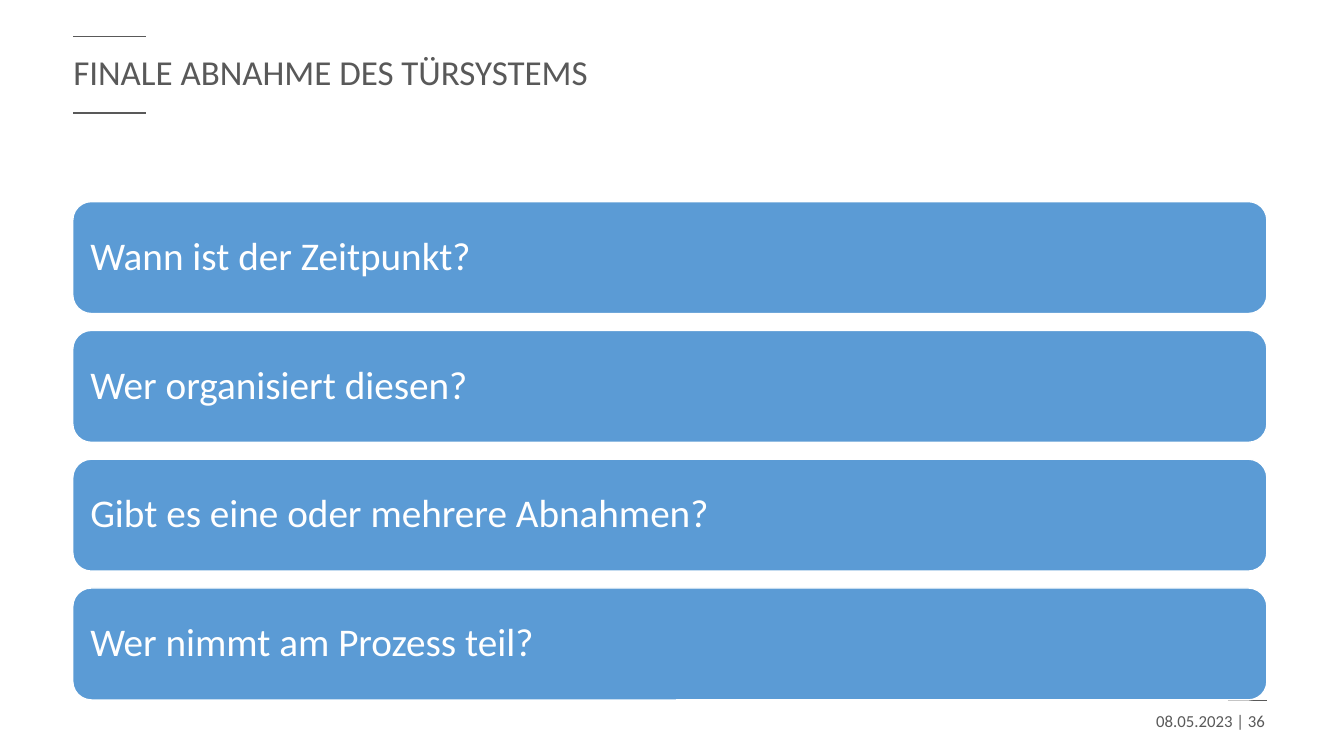
"""Build the slide on the final acceptance of the door system."""
from dataclasses import dataclass

from lxml.etree import SubElement
from pptx import Presentation
from pptx.dml.color import RGBColor
from pptx.enum.shapes import MSO_CONNECTOR as Connector, MSO_SHAPE as Shape
from pptx.enum.text import MSO_ANCHOR as Anchor, MSO_AUTO_SIZE as AutoSize, PP_ALIGN as Align
from pptx.oxml.ns import qn
from pptx.slide import Slide
from pptx.text.text import TextFrame
from pptx.util import Pt

GREY = RGBColor(0x59, 0x59, 0x59)
BLUE = RGBColor(0x5B, 0x9B, 0xD5)
WHITE = RGBColor(0xFF, 0xFF, 0xFF)
FONT = "Calibri"

CARD_LEFT, CARD_TOP = 52, 144
CARD_WIDTH, CARD_HEIGHT = 853, 80
CARD_PITCH = 92
CARD_INSET = 8.64


@dataclass(frozen=True)
class Rule:
    left: float
    right: float
    y: float


@dataclass(frozen=True)
class TextStyle:
    size: float
    color: RGBColor
    align: Align = Align.LEFT
    line_spacing: float = 0.9


TITLE_STYLE = TextStyle(25, GREY)
CARD_STYLE = TextStyle(28, WHITE)
FOOTER_STYLE = TextStyle(12, GREY, Align.RIGHT, 1.0)

RULES = (
    Rule(52.4, 104, 26),
    Rule(52.4, 104, 80.6),
    Rule(877, 905, 500.4),
)
QUESTIONS = (
    "Wann ist der Zeitpunkt?",
    "Wer organisiert diesen?",
    "Gibt es eine oder mehrere Abnahmen?",
    "Wer nimmt am Prozess teil?",
)


def write(frame: TextFrame, text: str, style: TextStyle) -> None:
    frame.word_wrap = True
    frame.auto_size = AutoSize.NONE
    frame.vertical_anchor = Anchor.MIDDLE
    paragraph = frame.paragraphs[0]
    paragraph.alignment = style.align
    paragraph.line_spacing = style.line_spacing
    run = paragraph.add_run()
    run.text = text
    run.font.name = FONT
    run.font.size = Pt(style.size)
    run.font.color.rgb = style.color


def draw_rule(slide: Slide, rule: Rule) -> None:
    line = slide.shapes.add_connector(
        Connector.STRAIGHT, Pt(rule.left), Pt(rule.y), Pt(rule.right), Pt(rule.y)
    )
    line.line.color.rgb = GREY
    line.line.width = Pt(1)
    SubElement(line._element.spPr, qn("a:effectLst"))


def draw_card(slide: Slide, index: int, question: str) -> None:
    card = slide.shapes.add_shape(
        Shape.ROUNDED_RECTANGLE,
        Pt(CARD_LEFT), Pt(CARD_TOP + index * CARD_PITCH), Pt(CARD_WIDTH), Pt(CARD_HEIGHT),
    )
    card.shadow.inherit = False
    card.fill.solid()
    card.fill.fore_color.rgb = BLUE
    card.line.color.rgb = WHITE
    card.line.width = Pt(1)
    frame = card.text_frame
    frame.margin_left = frame.margin_right = Pt(CARD_INSET)
    frame.margin_top = frame.margin_bottom = Pt(CARD_INSET)
    write(frame, question, CARD_STYLE)


def main() -> None:
    deck = Presentation()
    deck.slide_width, deck.slide_height = Pt(960), Pt(540)
    slide = deck.slides.add_slide(deck.slide_layouts[5])

    title = slide.shapes.title
    title.left, title.top, title.width, title.height = Pt(45.2), Pt(26), Pt(721), Pt(54.6)
    write(title.text_frame, "FINALE ABNAHME DES TÜRSYSTEMS", TITLE_STYLE)

    for rule in RULES:
        draw_rule(slide, rule)
    footer = slide.shapes.add_textbox(Pt(694.8), Pt(500.4), Pt(216), Pt(28.8))
    write(footer.text_frame, "08.05.2023 | 36", FOOTER_STYLE)
    for index, question in enumerate(QUESTIONS):
        draw_card(slide, index, question)

    deck.save("out.pptx")


if __name__ == "__main__":
    main()
